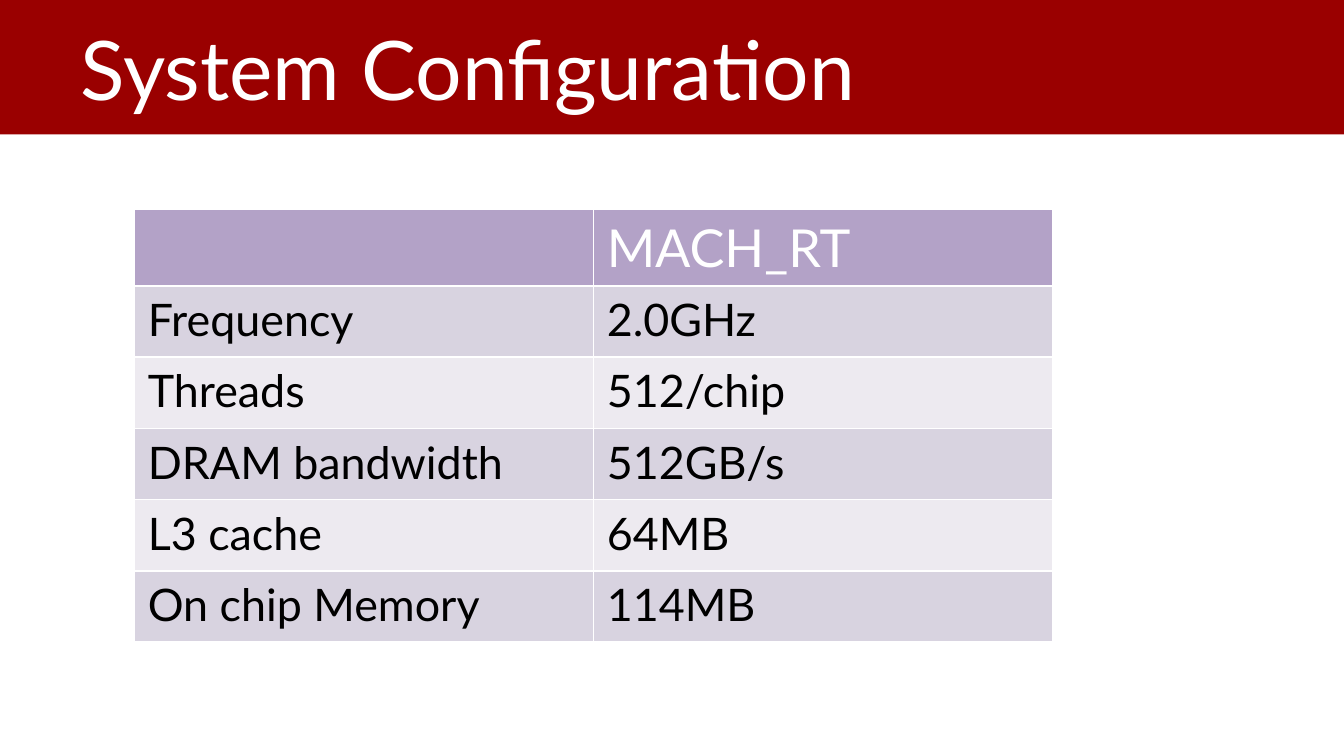
"""Build the system configuration slide with its specification table."""
from typing import NamedTuple

from lxml import etree
from pptx import Presentation
from pptx import util as u
from pptx.dml.color import RGBColor
from pptx.enum import shapes, text
from pptx.oxml.ns import qn

COLOURS = {
    "band": "9A0000",
    "white": "FFFFFF",
    "black": "000000",
    "header": "B3A2C7",
    "odd": "D8D3E0",
    "even": "EDEAF0",
}
FONT = "Lato"


class Specification(NamedTuple):
    label: str
    value: str


class RowStyle(NamedTuple):
    fill: str
    colour: str
    size: int


HEADER = Specification("", "MACH_RT")
SPECIFICATIONS = [
    Specification("Frequency", "2.0GHz"),
    Specification("Threads", "512/chip"),
    Specification("DRAM bandwidth", "512GB/s"),
    Specification("L3 cache", "64MB"),
    Specification("On chip Memory", "114MB"),
]
HEADER_STYLE = RowStyle("header", "white", 28)
BODY_STYLES = [RowStyle("odd", "black", 24), RowStyle("even", "black", 24)]


def rgb(name: str) -> RGBColor:
    return RGBColor.from_string(COLOURS[name])


def format_font(font, size: int, colour: str) -> None:
    font.name = FONT
    font.size = u.Pt(size)
    font.bold = False
    font.color.rgb = rgb(colour)


def add_borders(cell) -> None:
    properties = cell._tc.get_or_add_tcPr()
    for side in "LRTB":
        line = etree.SubElement(properties, qn(f"a:ln{side}"), w=str(u.Pt(1)))
        fill = etree.SubElement(line, qn("a:solidFill"))
        etree.SubElement(fill, qn("a:srgbClr"), val=COLOURS["white"])


def fill_cell(cell, content: str, style: RowStyle) -> None:
    add_borders(cell)
    cell.fill.solid()
    cell.fill.fore_color.rgb = rgb(style.fill)
    cell.text_frame.text = content
    for run in cell.text_frame.paragraphs[0].runs:
        format_font(run.font, style.size, style.colour)


def add_title(slide, content: str) -> None:
    title = slide.shapes.title
    title.left, title.top = u.Inches(0.5), u.Inches(0.19)
    title.width, title.height = u.Inches(7.83), u.Inches(0.81)
    frame = title.text_frame
    frame.text = content
    frame.vertical_anchor = text.MSO_ANCHOR.MIDDLE
    frame.auto_size = text.MSO_AUTO_SIZE.NONE
    paragraph = frame.paragraphs[0]
    paragraph.alignment = text.PP_ALIGN.LEFT
    paragraph.line_spacing = u.Pt(40)
    format_font(paragraph.runs[0].font, 44, "white")


def add_title_band(slide) -> None:
    band = slide.shapes.add_shape(
        shapes.MSO_SHAPE.RECTANGLE, 0, 0, u.Inches(10), u.Inches(1)
    )
    band.shadow.inherit = False
    band.fill.solid()
    band.fill.fore_color.rgb = rgb("band")
    band.line.fill.background()
    slide.shapes.title.element.addprevious(band.element)


def add_specification_table(slide) -> None:
    rows = [HEADER, *SPECIFICATIONS]
    table = slide.shapes.add_table(
        len(rows), 2, u.Inches(1), u.Inches(1.56),
        u.Inches(6.83), u.Inches(3.22),
    ).table
    for row in table.rows:
        row.height = u.Inches(0.53)
    for index, specification in enumerate(rows):
        style = BODY_STYLES[(index - 1) % 2] if index else HEADER_STYLE
        for column, content in enumerate(specification):
            fill_cell(table.cell(index, column), content, style)


def main() -> None:
    presentation = Presentation()
    presentation.slide_width = u.Inches(10)
    presentation.slide_height = presentation.slide_width * 9 // 16
    slide = presentation.slides.add_slide(presentation.slide_layouts[5])
    add_title(slide, "System Configuration")
    add_title_band(slide)
    add_specification_table(slide)
    presentation.save("out.pptx")


if __name__ == "__main__":
    main()
